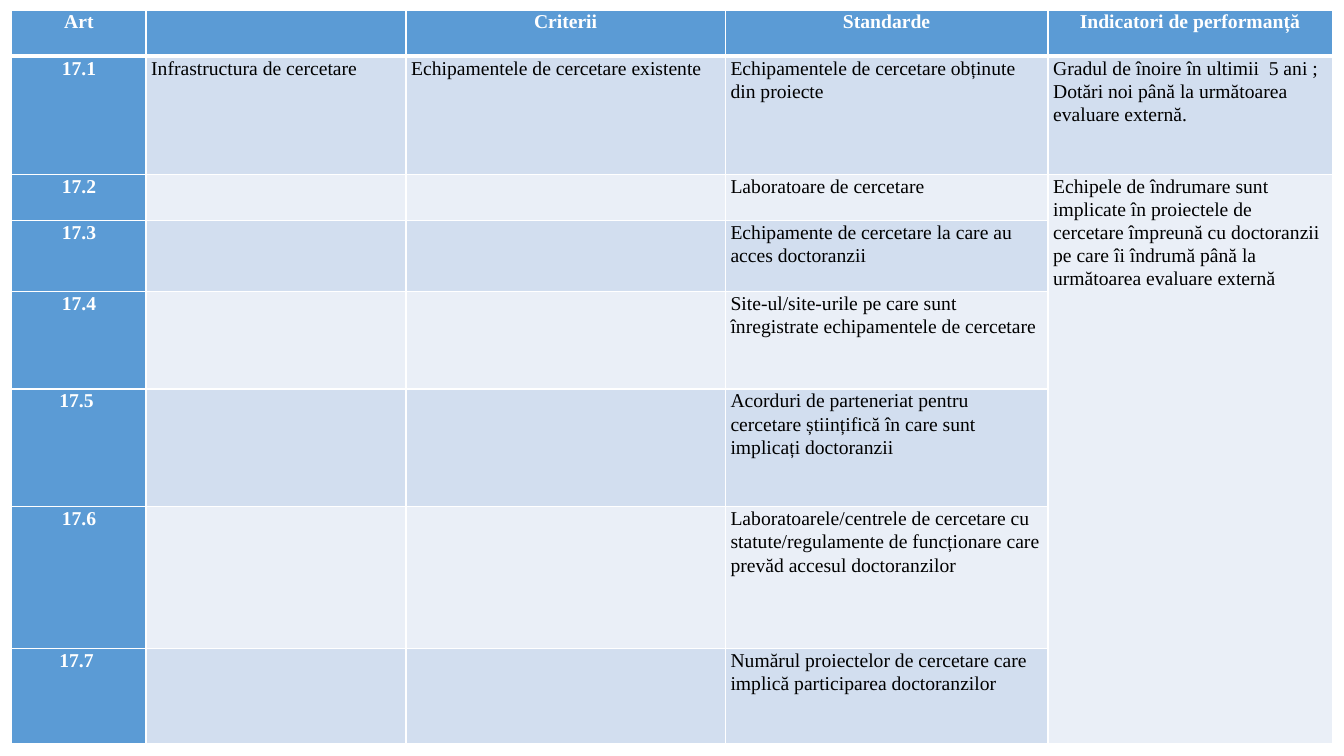
"""Build a slide with a table of research infrastructure criteria."""
from lxml import etree
from pptx import Presentation
from pptx import util as u
from pptx.dml.color import RGBColor
from pptx.enum import text
from pptx.oxml import ns

BLUE, PALE, PALER, WHITE, BLACK = "5B9BD5", "D2DEEF", "EAEFF7", "FFFFFF", "000000"
COLUMN_WIDTHS = [3.38, 6.55, 8.05, 8.13, 7.16]
ROW_HEIGHTS = [1.17, 2.97, 1.17, 1.78, 2.46, 2.97, 3.58, 2.39]
ROWS = [
    ["Art", "", "Criterii", "Standarde", "Indicatori de performanță"],
    ["17.1", "Infrastructura de cercetare", "Echipamentele de cercetare existente",
     "Echipamentele de cercetare obținute din proiecte",
     "Gradul de înoire în ultimii  5 ani ;\nDotări noi până la următoarea evaluare externă."],
    ["17.2", "", "", "Laboratoare de cercetare",
     "Echipele de îndrumare sunt implicate în proiectele de cercetare împreună cu "
     "doctoranzii pe care îi îndrumă până la următoarea evaluare externă"],
    ["17.3", "", "", "Echipamente de cercetare la care au acces doctoranzii", ""],
    ["17.4", "", "", "Site-ul/site-urile pe care sunt înregistrate echipamentele de cercetare", ""],
    ["17.5 ", "", "", "Acorduri de parteneriat pentru cercetare științifică "
     "în care sunt implicați doctoranzii", ""],
    ["17.6", "", "", "Laboratoarele/centrele de cercetare cu statute/regulamente "
     "de funcționare care prevăd accesul doctoranzilor", ""],
    ["17.7 ", "", "", "Numărul proiectelor de cercetare care implică "
     "participarea doctoranzilor", ""],
]


def write_cell(cell, content, fill, color=BLACK, bold=False, align=text.PP_ALIGN.LEFT):
    cell.margin_left = cell.margin_right = u.Cm(0.13)
    cell.margin_top = cell.margin_bottom = 0
    cell.fill.solid()
    cell.fill.fore_color.rgb = RGBColor.from_string(fill)
    cell.text = content
    for para in cell.text_frame.paragraphs:
        para.alignment = align
        para.line_spacing = 1.07
        para.font.size = u.Pt(14)
        for span in para.runs:
            span.font.name = "Times New Roman"
            span.font.size = u.Pt(14)
            span.font.bold = bold
            span.font.color.rgb = RGBColor.from_string(color)


def add_borders(cell, color, **points):
    properties = cell._tc.get_or_add_tcPr()
    for position, (side, width) in enumerate(points.items()):
        line = etree.Element(ns.qn(f"a:ln{side}"), w=str(u.Pt(width)))
        solid = etree.SubElement(line, ns.qn("a:solidFill"))
        etree.SubElement(solid, ns.qn("a:srgbClr"), val=color)
        properties.insert(position, line)


deck = Presentation()
deck.slide_width, deck.slide_height = u.Cm(33.87), u.Cm(19.05)
page = deck.slides.add_slide(deck.slide_layouts[6])

frame = page.shapes.add_table(
    len(ROWS), len(COLUMN_WIDTHS), u.Cm(0.3), u.Cm(0.25),
    u.Cm(sum(COLUMN_WIDTHS)), u.Cm(sum(ROW_HEIGHTS)))
table = frame.table
for column, width in zip(table.columns, COLUMN_WIDTHS):
    column.width = u.Cm(width)
for row, height in zip(table.rows, ROW_HEIGHTS):
    row.height = u.Cm(height)

last = len(COLUMN_WIDTHS) - 1
for r, contents in enumerate(ROWS):
    for c, content in enumerate(contents):
        cell = table.cell(r, c)
        if r == 0 or c == 0:
            write_cell(cell, content, BLUE, color=WHITE, bold=True,
                       align=text.PP_ALIGN.CENTER)
        else:
            banded = r % 2 and not (c == last and r > 1)
            write_cell(cell, content, PALE if banded else PALER)
        add_borders(cell, WHITE, L=1, R=1, T=3 if r == 1 else 1, B=3 if r == 0 else 1)
table.cell(2, last).merge(table.cell(len(ROWS) - 1, last))

deck.save("out.pptx")
